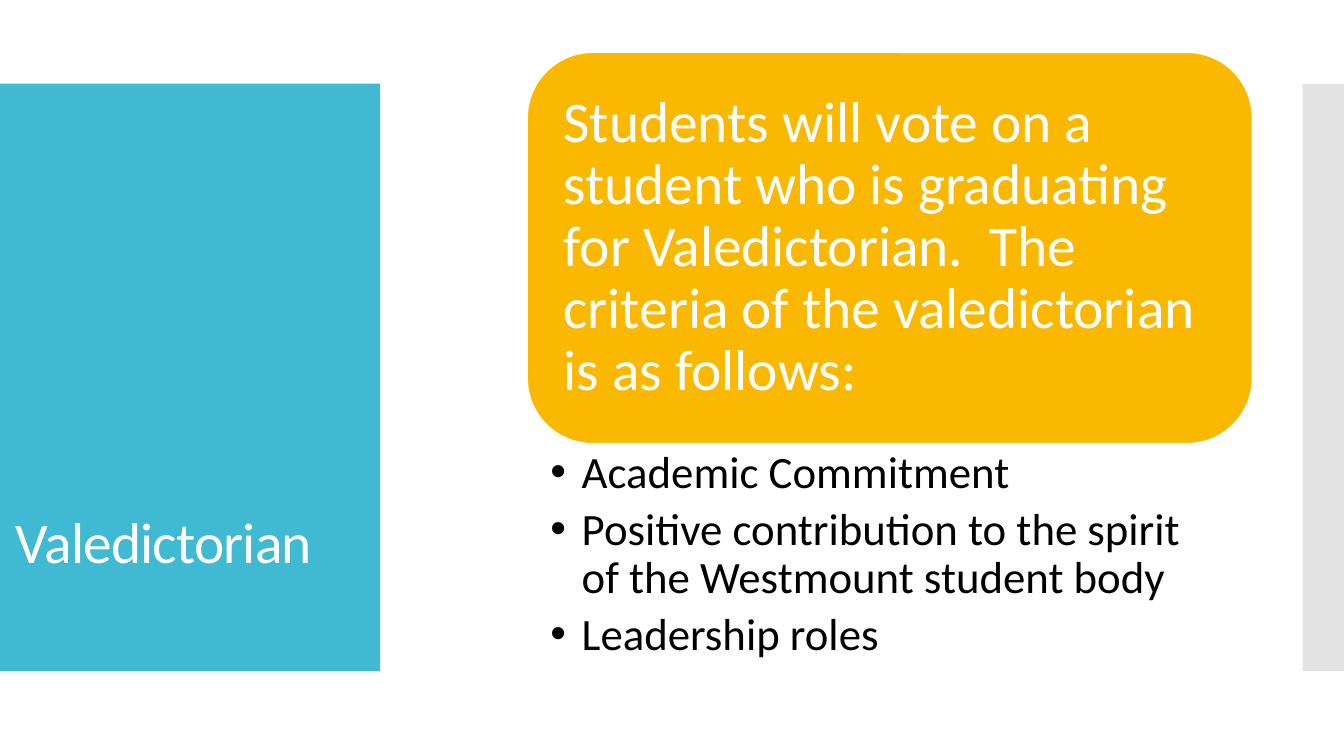
from lxml import etree
from pptx import Presentation
from pptx.dml.color import RGBColor
from pptx.enum.shapes import MSO_SHAPE as Shape
from pptx.enum.text import MSO_ANCHOR as Anchor, PP_ALIGN as Align
from pptx.oxml.ns import qn
from pptx.util import Inches, Pt

WHITE = RGBColor(0xFF, 0xFF, 0xFF)
BLACK = RGBColor(0, 0, 0)
TEAL = RGBColor(0x40, 0xBA, 0xD2)
GOLD = RGBColor(0xFA, 0xB9, 0x00)
GREY = RGBColor(0xC8, 0xC8, 0xC8)
FONT = "Calibri"

INTRO = ("Students will vote on a student who is graduating for Valedictorian.  "
         "The criteria of the valedictorian is as follows:")
CRITERIA = [
    "Academic Commitment",
    "Positive contribution to the spirit of the Westmount student body",
    "Leadership roles",
]


def add_block(slide, box, color, kind=Shape.RECTANGLE):
    block = slide.shapes.add_shape(kind, *map(Inches, box))
    block.shadow.inherit = False
    block.fill.solid()
    block.fill.fore_color.rgb = color
    block.line.fill.background()
    return block


def add_text(slide, box, lines, size, color, insets, anchor=Anchor.TOP):
    """Add a wrapped text box; insets run left, top, right, bottom."""
    frame = slide.shapes.add_textbox(*map(Inches, box)).text_frame
    frame.word_wrap = True
    frame.vertical_anchor = anchor
    (frame.margin_left, frame.margin_top,
     frame.margin_right, frame.margin_bottom) = map(Inches, insets)
    frame.text = "\n".join(lines)
    for para in frame.paragraphs:
        para.alignment = Align.LEFT
        para.line_spacing = 0.9
        para.font.name = FONT
        para.font.size = Pt(size)
        para.font.color.rgb = color
    return frame


def add_bullet(para, indent):
    props = para._p.get_or_add_pPr()
    props.set("marL", str(Inches(indent)))
    props.set("indent", str(-Inches(indent)))
    font = etree.Element(qn("a:buFont"), typeface="Arial")
    mark = etree.Element(qn("a:buChar"), char="•")
    props.find(qn("a:defRPr")).addprevious(font)
    font.addnext(mark)


def add_title(slide, left, top, width, height):
    add_block(slide, (left, top, width, height), TEAL)
    box = (left + 0.06, top + 3.22, 3.34, 2.71)
    frame = add_text(slide, box, ["Valedictorian"], 41, WHITE,
                     (0.1, 0.05, 0.1, 0.05), Anchor.MIDDLE)
    run = frame.paragraphs[0].runs[0]
    run._r.get_or_add_rPr().set("spc", "-60")


def add_edge(slide, *box):
    """Add the half-transparent strip at the right edge."""
    strip = add_block(slide, box, GREY)
    color = strip._element.spPr.find(".//" + qn("a:srgbClr"))
    etree.SubElement(color, qn("a:alpha"), val="50000")


def add_intro(slide, left, top, width, height):
    card = add_block(slide, (left, top, width, height), GOLD,
                     Shape.ROUNDED_RECTANGLE)
    card.line.color.rgb = WHITE
    card.line.width = Pt(0.85)
    pad = 0.19
    box = (left + pad, top + pad, width - 2 * pad, height - 2 * pad)
    add_text(slide, box, [INTRO], 41, WHITE, [0.17] * 4, Anchor.MIDDLE)


def add_criteria(slide, *box):
    frame = add_text(slide, box, CRITERIA, 32, BLACK,
                     (0.23, 0.06, 0.32, 0.06))
    for para in frame.paragraphs:
        para.space_after = Pt(6)
        add_bullet(para, 0.31)


def main():
    deck = Presentation()
    deck.slide_width = Inches(13.33)
    deck.slide_height = Inches(7.5)
    slide = deck.slides.add_slide(deck.slide_layouts[6])
    add_title(slide, 0, 0.83, 3.77, 5.83)
    add_edge(slide, 12.92, 0.83, 0.41, 5.83)
    add_intro(slide, 5.23, 0.52, 7.19, 3.88)
    add_criteria(slide, 5.23, 4.4, 7.19, 2.32)
    deck.save("out.pptx")


if __name__ == "__main__":
    main()
